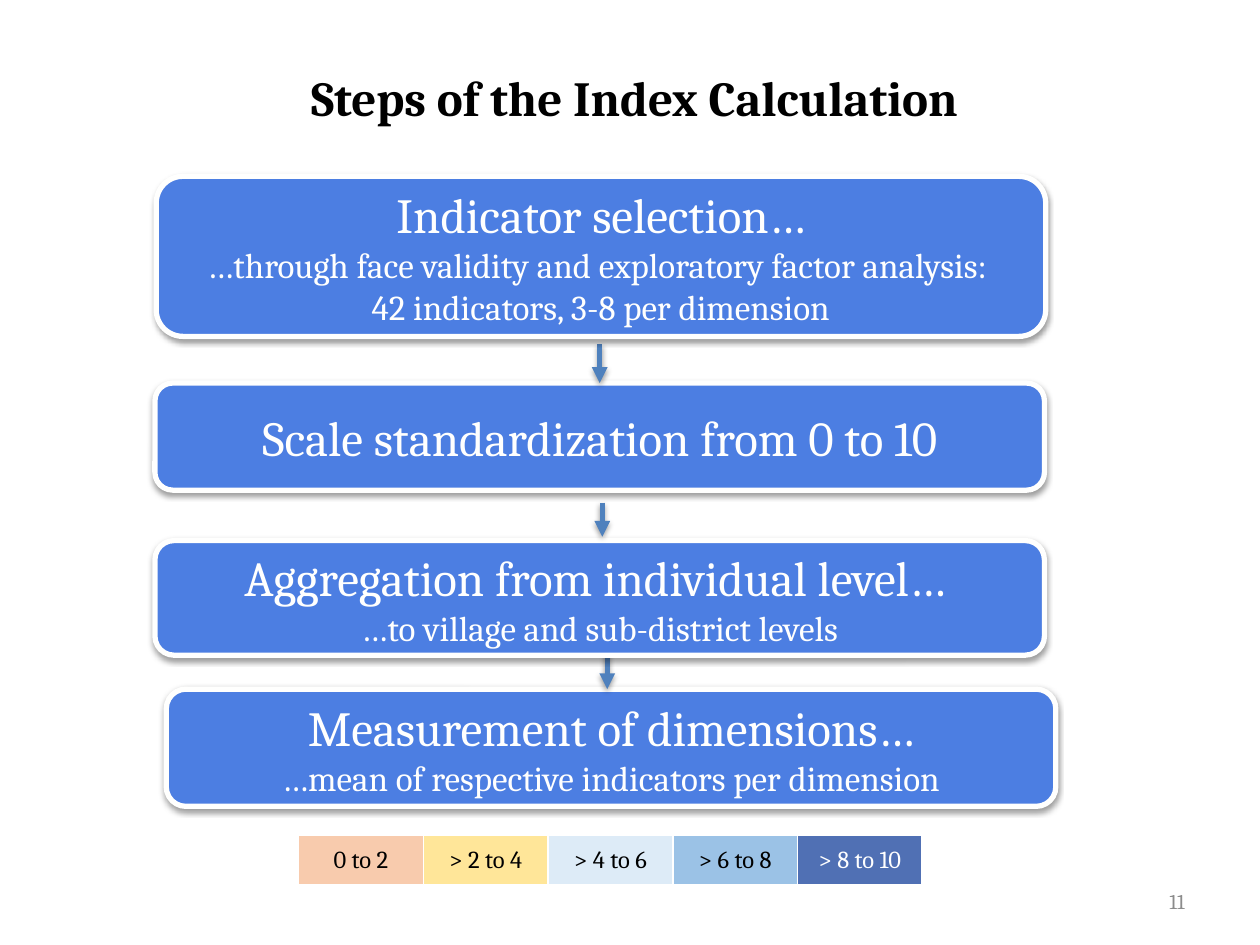
from lxml import etree
from pptx import Presentation
from pptx import util as u
from pptx.dml.color import RGBColor
from pptx.enum import shapes, text
from pptx.oxml.ns import qn

COLUMNS, ROWS = 100, 75
STEP_WIDTH = 70.6
STEPS = [
    (12.4, 14, 12.7, ["Indicator selection…",
                      "…through face validity and exploratory factor analysis: ",
                      "42 indicators, 3-8 per dimension"]),
    (12.3, 30.4, 8.5, ["Scale standardization from 0 to 10"]),
    (12.3, 42.9, 9.1, ["Aggregation from individual level… ",
                       "…to village and sub-district levels"]),
    (13.2, 54.7, 9.3, ["Measurement of dimensions…",
                       "…mean of respective indicators per dimension"]),
]
ARROWS = [None, (47.6, 27.3, 30.4), (47.8, 39.9, 42.6), (48.2, 50.8, 54.7)]
SCALE = [
    ("0 to 2", "F8CBAD", "000000"),
    ("> 2 to 4", "FFE699", "000000"),
    ("> 4 to 6", "DDEBF7", "000000"),
    ("> 6 to 8", "9BC2E6", "000000"),
    ("> 8 to 10", "5070B4", "FFFFFF"),
]


def rgb(value):
    return RGBColor.from_string(value)


class StepsSlide:
    font_name = "Cambria"
    step_fill, step_ink, arrow_ink = "4C7EE2", "FFFFFE", "4F81BD"
    heading_size, detail_size = 28, 20

    def __init__(self, deck):
        self.column = deck.slide_width / COLUMNS
        self.row = deck.slide_height / ROWS
        self.slide = deck.slides.add_slide(deck.slide_layouts[5])

    def area(self, left, top, width, height):
        return (u.Emu(round(left * self.column)), u.Emu(round(top * self.row)),
                u.Emu(round(width * self.column)), u.Emu(round(height * self.row)))

    def format(self, paragraph, size, color, bold=False, align=text.PP_ALIGN.CENTER):
        paragraph.alignment = align
        font = paragraph.font
        font.name, font.size, font.bold = self.font_name, u.Pt(size), bold
        font.color.rgb = rgb(color)

    def shadow(self, element):
        effects = etree.SubElement(element._element.spPr, qn("a:effectLst"))
        outer = etree.SubElement(effects, qn("a:outerShdw"), blurRad="40000",
                                 dist="20000", dir="5400000", rotWithShape="0")
        black = etree.SubElement(outer, qn("a:srgbClr"), val="000000")
        etree.SubElement(black, qn("a:alpha"), val="38000")

    def title(self, wording, *place):
        title = self.slide.shapes.title
        title.left, title.top, title.width, title.height = self.area(*place)
        frame = title.text_frame
        frame.text = wording
        frame.vertical_anchor = text.MSO_ANCHOR.MIDDLE
        frame.margin_left = frame.margin_right = frame.margin_top = frame.margin_bottom = 0
        self.format(frame.paragraphs[0], self.heading_size, "000000", bold=True)

    def page_number(self, number, *place):
        frame = self.slide.shapes.add_textbox(*self.area(*place)).text_frame
        frame.word_wrap = True
        frame.vertical_anchor = text.MSO_ANCHOR.MIDDLE
        frame.text = number
        self.format(frame.paragraphs[0], 12, "8C8C8C", align=text.PP_ALIGN.RIGHT)

    def step(self, left, top, height, lines):
        box = self.slide.shapes.add_shape(shapes.MSO_SHAPE.ROUNDED_RECTANGLE,
                                          *self.area(left, top, STEP_WIDTH, height))
        box.fill.solid()
        box.fill.fore_color.rgb = rgb(self.step_fill)
        box.line.color.rgb = rgb(self.step_ink)
        box.line.width = u.Pt(3)
        self.shadow(box)
        frame = box.text_frame
        frame.word_wrap = True
        frame.vertical_anchor = text.MSO_ANCHOR.MIDDLE
        frame.text = "\n".join(lines)
        for index, paragraph in enumerate(frame.paragraphs):
            self.format(paragraph, self.detail_size if index else self.heading_size,
                        self.step_ink)

    def arrow(self, x, start, end):
        left, top, _, length = self.area(x, start, 0, end - start)
        arrow = self.slide.shapes.add_connector(shapes.MSO_CONNECTOR.STRAIGHT,
                                                left, top, left, top + length)
        arrow.line.color.rgb = rgb(self.arrow_ink)
        arrow.line.width = u.Pt(3)
        etree.SubElement(arrow.line._get_or_add_ln(), qn("a:tailEnd"), type="triangle")
        self.shadow(arrow)

    def scale(self, entries, *place):
        table = self.slide.shapes.add_table(1, len(entries), *self.area(*place)).table
        table.first_row = table.horz_banding = False
        for cell, (label, fill, ink) in zip(table.iter_cells(), entries):
            cell.fill.solid()
            cell.fill.fore_color.rgb = rgb(fill)
            cell.vertical_anchor = text.MSO_ANCHOR.MIDDLE
            cell.margin_left = cell.margin_right = cell.margin_top = u.Inches(0.01)
            cell.margin_bottom = 0
            cell.text = label
            self.format(cell.text_frame.paragraphs[0], 14, ink)


def main():
    deck = Presentation()
    deck.slide_width, deck.slide_height = u.Inches(10), u.Inches(7.5)
    page = StepsSlide(deck)
    page.page_number("11", 88.5, 69.5, 6.5, 4)
    page.title("Steps of the Index Calculation", 5.9, 2.6, 88.9, 10.2)
    for step, arrow in reversed(list(zip(STEPS, ARROWS))):
        page.step(*step)
        if arrow:
            page.arrow(*arrow)
    page.scale(SCALE, 23.7, 66.3, 49.5, 3.9)
    deck.save("out.pptx")


if __name__ == "__main__":
    main()
